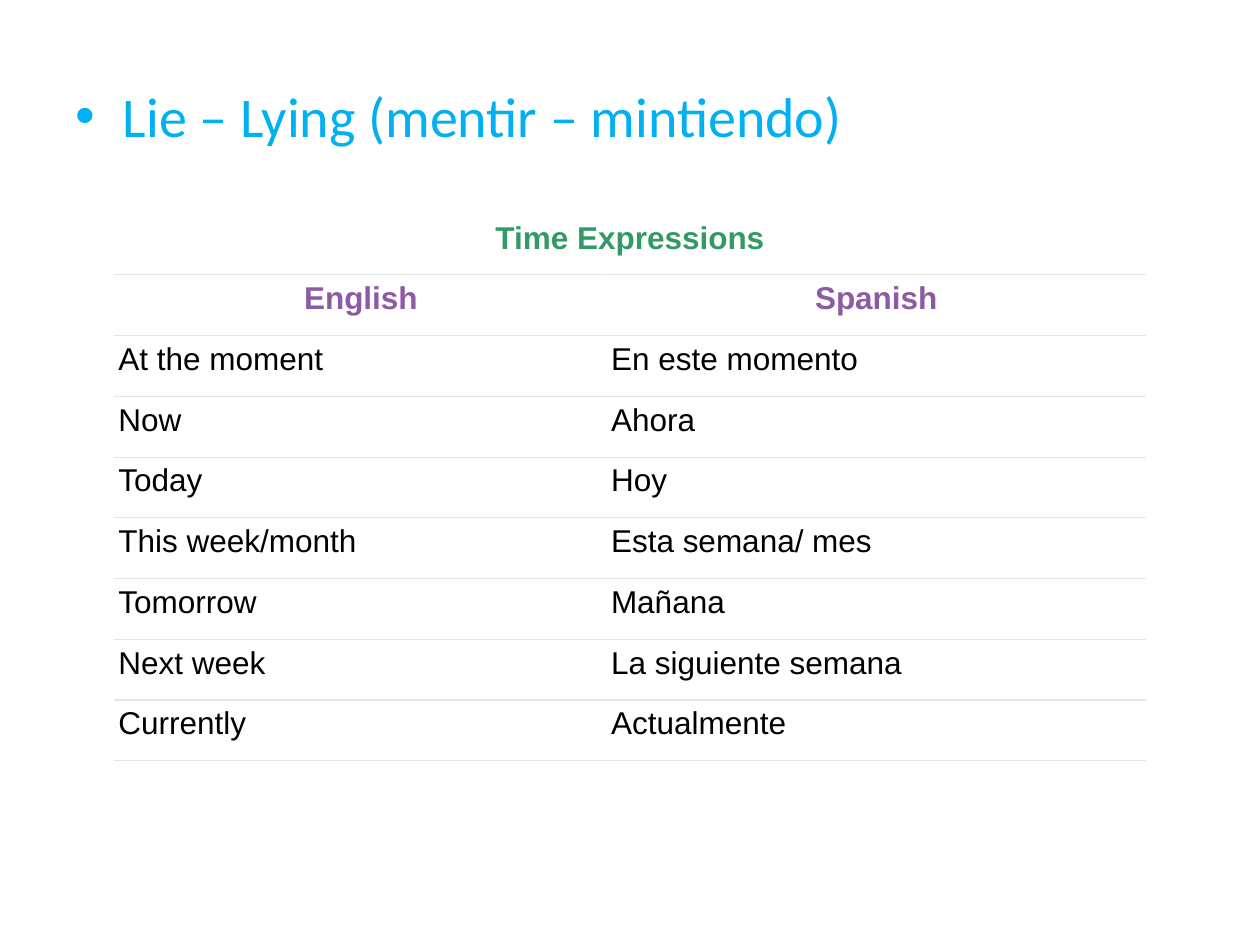
from lxml.etree import SubElement
from pptx import Presentation
from pptx.dml.color import RGBColor
from pptx.enum.text import PP_ALIGN as Align
from pptx.oxml.ns import qn
from pptx.util import Inches, Pt

BLUE = RGBColor(0x00, 0xB0, 0xF0)
GREEN = RGBColor(0x33, 0x99, 0x66)
PURPLE = RGBColor(0x8D, 0x5B, 0xA4)
BLACK = RGBColor(0x00, 0x00, 0x00)
WHITE = RGBColor(0xFF, 0xFF, 0xFF)
RULE = RGBColor(0xE4, 0xE4, 0xE2)

EXPRESSIONS = [
    ("At the moment", "En este momento"),
    ("Now", "Ahora"),
    ("Today", "Hoy"),
    ("This week/month", "Esta semana/ mes"),
    ("Tomorrow", "Mañana"),
    ("Next week", "La siguiente semana"),
    ("Currently", "Actualmente"),
]


class VocabularySlide:
    """Hold the style and current page of a vocabulary lesson."""

    def __init__(self, deck):
        self.page = deck.slides.add_slide(deck.slide_layouts[1])
        title = self.page.shapes.title
        title.element.getparent().remove(title.element)

    def set_font(self, para, name, size, color, bold=False):
        font = para.font
        font.name, font.size, font.bold = name, Pt(size), bold
        font.color.rgb = color

    def bullet(self, text, left, top, width, height):
        body = self.page.placeholders[1]
        body.left, body.top = Inches(left), Inches(top)
        body.width, body.height = Inches(width), Inches(height)
        para = body.text_frame.paragraphs[0]
        para.text = text
        self.set_font(para, "Calibri", 32, BLUE)

    def rule(self, cell, side):
        line = SubElement(cell._tc.get_or_add_tcPr(), qn(f"a:{side}"), w=str(Pt(0.75)))
        fill = SubElement(line, qn("a:solidFill"))
        SubElement(fill, qn("a:srgbClr"), val=str(RULE))

    def cell(self, cell, text, color, heading, sides):
        cell.margin_left = cell.margin_right = Inches(0.03)
        cell.margin_top = cell.margin_bottom = Inches(0.05)
        for side in sides:
            self.rule(cell, side)
        cell.fill.solid()
        cell.fill.fore_color.rgb = WHITE
        para = cell.text_frame.paragraphs[0]
        para.text = text
        para.alignment = Align.CENTER if heading else Align.LEFT
        self.set_font(para, "Arial", 18, color, heading)

    def table(self, heading, columns, rows, left, top, widths, height):
        lines = [(heading, ""), columns, *rows]
        frame = self.page.shapes.add_table(
            len(lines), len(widths), Inches(left), Inches(top),
            Inches(sum(widths)), Inches(height))
        grid = frame.table
        grid.first_row = grid.horz_banding = False
        for column, width in zip(grid.columns, widths):
            column.width = Inches(width)
        grid.cell(0, 0).merge(grid.cell(0, len(widths) - 1))
        colors = [GREEN, PURPLE] + [BLACK] * len(rows)
        for index, (texts, color) in enumerate(zip(lines, colors)):
            sides = ("lnT", "lnB") if index else ("lnB",)
            for place, text in enumerate(texts):
                self.cell(grid.cell(index, place), text, color, index < 2, sides)


def main():
    deck = Presentation()
    deck.slide_width, deck.slide_height = Inches(10), Inches(7.5)
    lesson = VocabularySlide(deck)
    lesson.bullet("Lie – Lying (mentir – mintiendo)", 0.5, 0.6, 9, 6.1)
    lesson.table("Time Expressions", ("English", "Spanish"), EXPRESSIONS,
                 0.91, 1.7, (3.91, 4.27), 4.34)
    deck.save("out.pptx")


if __name__ == "__main__":
    main()
